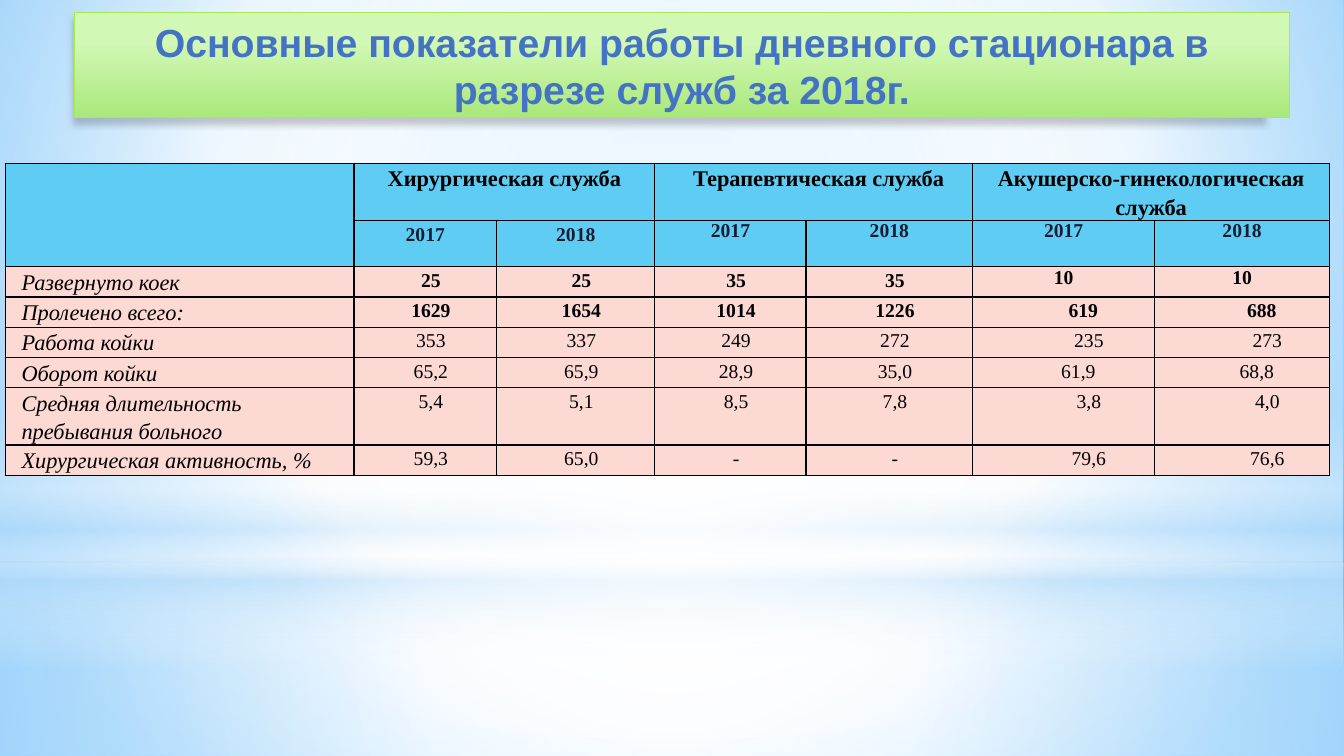
import pptx
import pptx.util
import pptx.dml.color
import pptx.enum.shapes
import pptx.enum.text
import pptx.oxml
import pptx.oxml.ns

Pt = pptx.util.Pt
qn = pptx.oxml.ns.qn
NS = 'xmlns:a="http://schemas.openxmlformats.org/drawingml/2006/main"'

# Content
TITLE = "Основные показатели работы дневного стационара в разрезе служб за 2018г."
SERVICES = ["Хирургическая служба", "Терапевтическая служба",
            "Акушерско-гинекологическая служба"]
YEARS = ["2017", "2018"]
# label, values, bold, left indent of the last two columns, their first-line indent
INDICATORS = [
    ("Развернуто коек", ["25", "25", "35", "35", "10", "10"], True, 0, 0),
    ("Пролечено всего:", ["1629", "1654", "1014", "1226", "619", "688"], True, 36, -8),
    ("Работа койки", ["353", "337", "249", "272", "235", "273"], False, 36, 0),
    ("Оборот койки", ["65,2", "65,9", "28,9", "35,0", "61,9", "68,8"], False, 21, 0),
    ("Средняя длительность пребывания больного",
     ["5,4", "5,1", "8,5", "7,8", "3,8", "4,0"], False, 36, 0),
    ("Хирургическая активность, %",
     ["59,3", "65,0", "-", "-", "79,6", "76,6"], False, 36, 0),
]
COL_WIDTHS = [249, 102, 113, 108, 119, 130, 125]
ROW_HEIGHTS = [39, 33, 21.6, 21.6, 21.6, 21.6, 41, 21.6]
HEAD_FILL, BODY_FILL = "5ECCF3", "FCD9D3"

# Backdrop: shape, top, height, stops (position, colour, opacity), radial
BACKDROP = [
    ("RECTANGLE", 402, 138,
     [(0, "FFFFFF", 91), (37, "FFFFFF", 76), (100, "B4DCFA", 79)], True),
    ("RECTANGLE", 0, 402,
     [(0, "FFFFFF", 89), (48, "FFFFFF", 62), (100, "B4DCFA", 79)], True),
    ("RECTANGLE", 297, 180,
     [(0, "FFFFFF", 0), (29, "FFFFFF", 30), (45, "B4DCFA", 40),
      (55, "FFFFFF", 26), (65, "B4DCFA", 60), (100, "FFFFFF", 0)], False),
    ("OVAL", 126, 402, [(0, "FFFFFF", 100), (56, "FFFFFF", 0)], True),
]


def rgb(color):
    return pptx.dml.color.RGBColor.from_string(color)


def set_gradient(props, stops, center=None):
    """Swap the solid fill in props for a radial (center) or vertical gradient."""
    gs = "".join(
        f'<a:gs pos="{pos * 1000}"><a:srgbClr val="{color}">'
        f'<a:alpha val="{opacity * 1000}"/></a:srgbClr></a:gs>'
        for pos, color, opacity in stops)
    if center:
        l, t, r, b = (edge * 1000 for edge in center)
        kind = (f'<a:path path="circle"><a:fillToRect l="{l}" t="{t}" '
                f'r="{r}" b="{b}"/></a:path>')
    else:
        kind = '<a:lin ang="5400000" scaled="0"/>'
    grad = pptx.oxml.parse_xml(
        f'<a:gradFill {NS} rotWithShape="1"><a:gsLst>{gs}</a:gsLst>{kind}</a:gradFill>')
    props.replace(props.find(qn("a:solidFill")), grad)


def line_xml(tag, color, width):
    return pptx.oxml.parse_xml(
        f'<a:{tag} {NS} w="{Pt(width)}"><a:solidFill><a:srgbClr val="{color}"/>'
        f'</a:solidFill></a:{tag}>')


def style_cell(cell, fill):
    cell.margin_left = cell.margin_right = Pt(3.6)
    cell.margin_top = cell.margin_bottom = 0
    cell.fill.solid()
    cell.fill.fore_color.rgb = rgb(fill)
    for i, tag in enumerate(["lnL", "lnR", "lnT", "lnB"]):
        cell._tc.tcPr.insert(i, line_xml(tag, "000000", 1))


def write(cell, text, size, color="000000", bold=False, italic=False,
          center=True, left=0, first=0, spacing=1.15):
    p = cell.text_frame.paragraphs[0]
    p.text = text
    p.line_spacing = spacing
    if center:
        p.alignment = pptx.enum.text.PP_ALIGN.CENTER
    pPr = p._p.get_or_add_pPr()
    pPr.set("marL", str(Pt(left)))
    pPr.set("indent", str(Pt(first)))
    font = p.runs[0].font
    font.name, font.size, font.bold, font.italic = "Times New Roman", Pt(size), bold, italic
    font.color.rgb = rgb(color)


prs = pptx.Presentation()
prs.slide_width, prs.slide_height = Pt(960), Pt(540)
s = prs.slides.add_slide(prs.slide_layouts[5])

# Background and soft light bands
s.background.fill.solid()
s.background.fill.fore_color.rgb = rgb("FFFFFF")
set_gradient(s._element.find(".//" + qn("p:bgPr")),
             [(0, "9ED5FF", 100), (60, "FFFFFF", 100), (100, "5BB9FF", 100)],
             (20, 10, 20, 60))
for kind, top, height, stops, radial in BACKDROP:
    sp = s.shapes.add_shape(getattr(pptx.enum.shapes.MSO_SHAPE, kind),
                            0, Pt(top), prs.slide_width, Pt(height))
    sp.shadow.inherit = False
    sp.line.fill.background()
    sp.fill.solid()
    set_gradient(sp._element.spPr, stops, (50, 50, 50, 50) if radial else None)

# Table
tbl = s.shapes.add_table(len(ROW_HEIGHTS), len(COL_WIDTHS), Pt(3.8), Pt(116.6),
                         Pt(sum(COL_WIDTHS)), Pt(sum(ROW_HEIGHTS))).table
tbl.first_row = tbl.horz_banding = False
for col, width in zip(tbl.columns, COL_WIDTHS):
    col.width = Pt(width)
for i, (row, height) in enumerate(zip(tbl.rows, ROW_HEIGHTS)):
    row.height = Pt(height)
    for cell in row.cells:
        style_cell(cell, HEAD_FILL if i < 2 else BODY_FILL)

# Table head: one service over two years
tbl.cell(0, 0).merge(tbl.cell(1, 0))
for i, service in enumerate(SERVICES):
    c = 1 + 2 * i
    tbl.cell(0, c).merge(tbl.cell(0, c + 1))
    write(tbl.cell(0, c), service, 16, bold=True, left=7 if i == 1 else 0)
    for j, year in enumerate(YEARS):
        write(tbl.cell(1, c + j), year, 14, "191D34", bold=True,
              spacing=1.15 if i == 0 else 1.0)

# Table body
for r, (label, values, bold, left, first) in enumerate(INDICATORS, 2):
    write(tbl.cell(r, 0), label, 16, italic=True, center=False, left=8)
    for c, value in enumerate(values, 1):
        last = c > 4
        write(tbl.cell(r, c), value, 14, bold=bold,
              left=left if last else 8, first=first if last else 0,
              spacing=1.0 if last and left == 0 else 1.15)

# Title banner, in front of the backdrop
title = s.shapes.title
s.shapes._spTree.append(title._element)
title.left, title.top, title.width, title.height = Pt(53), Pt(9), Pt(868), Pt(75)
title.fill.solid()
set_gradient(title._element.spPr, [(28, "D1F8B5", 100), (100, "AAE87B", 100)])
title.line.color.rgb = rgb("A7EA52")
title.line.width = Pt(0.75)
title.shadow.inherit = False
title._element.spPr.find(qn("a:effectLst")).append(pptx.oxml.parse_xml(
    f'<a:outerShdw {NS} blurRad="{Pt(5)}" dist="{Pt(4)}" dir="5400000" sx="98000" '
    'algn="b" rotWithShape="0"><a:srgbClr val="000000"><a:alpha val="20000"/>'
    '</a:srgbClr></a:outerShdw>'))
tf = title.text_frame
tf.text = TITLE
tf.word_wrap = True
tf.auto_size = pptx.enum.text.MSO_AUTO_SIZE.SHAPE_TO_FIT_TEXT
tf.vertical_anchor = pptx.enum.text.MSO_ANCHOR.MIDDLE
p = tf.paragraphs[0]
p.alignment = pptx.enum.text.PP_ALIGN.CENTER
font = p.runs[0].font
font.name, font.size, font.bold = "Arial", Pt(28), True
font.color.rgb = rgb("4472C4")
p.runs[0]._r.get_or_add_rPr().insert(0, line_xml("ln", "2E75B6", 0.75))

prs.save("out.pptx")
